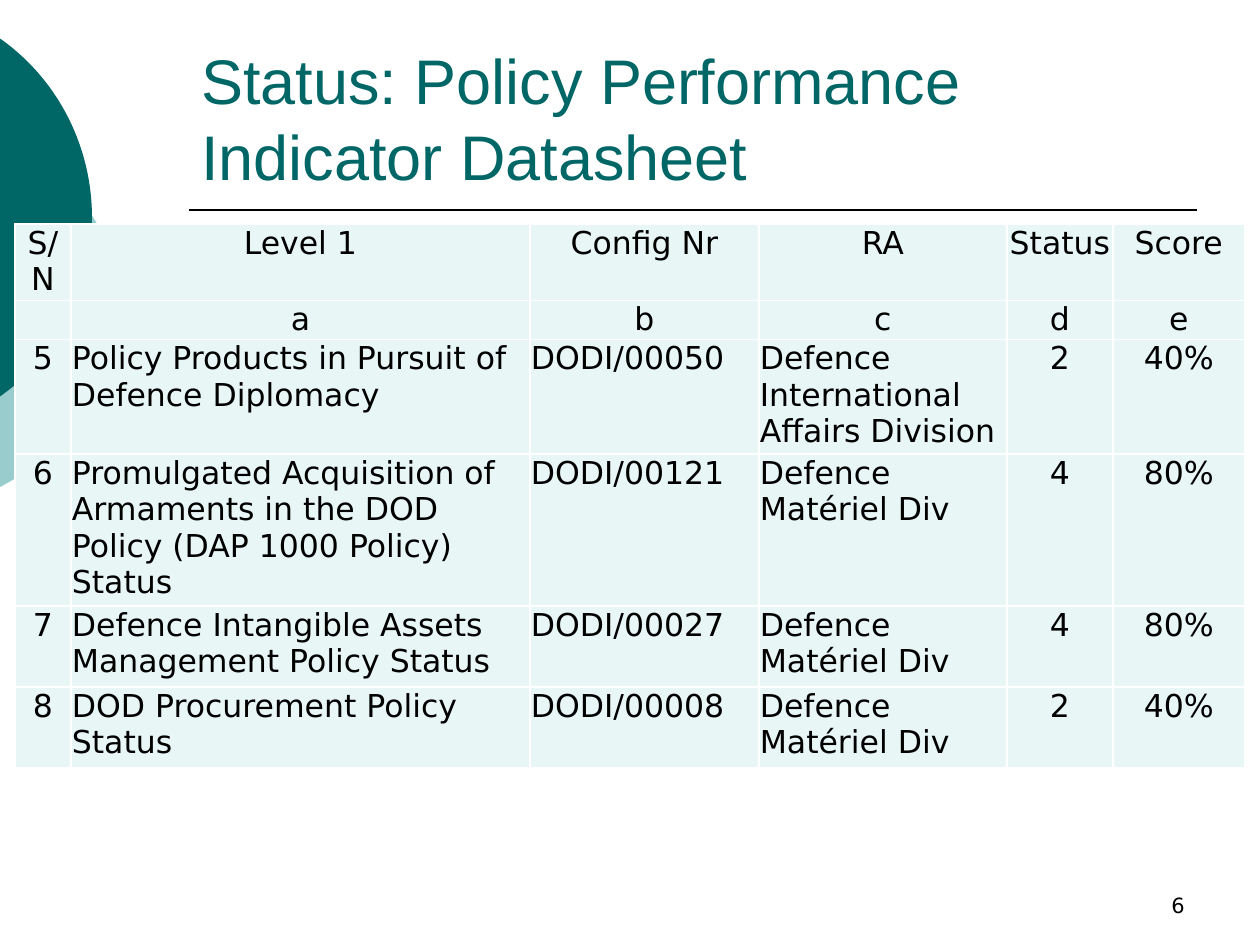
from pptx import Presentation
from pptx.dml.color import RGBColor
from pptx.enum.shapes import MSO_CONNECTOR as CONN, MSO_SHAPE as SHAPE
from pptx.enum.text import MSO_ANCHOR as ANCHOR, PP_ALIGN as ALIGN
from pptx.oxml.ns import qn
from pptx.util import Pt
from lxml.etree import SubElement

PX = 914400 // 126
TEAL, AQUA, MINT = "006666", "99CCCC", "E8F6F6"
BLACK, WHITE = "000000", "FFFFFF"
BODY_FONT = "DejaVu Sans"
COLUMNS = [56, 459, 229, 248, 106, 132]
ROW_HEIGHTS = [26, 26, 81, 81, 81, 81]
LEFT_COLUMNS = (1, 2, 3)
ROWS = [
    ["S/N", "Level 1", "Config Nr", "RA", "Status", "Score"],
    ["", "a", "b", "c", "d", "e"],
    ["5", "Policy Products in Pursuit of Defence Diplomacy", "DODI/00050",
     "Defence International Affairs Division", "2", "40%"],
    ["6", "Promulgated Acquisition of Armaments in the DOD Policy (DAP 1000 Policy) Status",
     "DODI/00121", "Defence Matériel Div", "4", "80%"],
    ["7", "Defence Intangible Assets Management Policy Status", "DODI/00027",
     "Defence Matériel Div", "4", "80%"],
    ["8", "DOD Procurement Policy Status", "DODI/00008",
     "Defence Matériel Div", "2", "40%"],
]


def px(n):
    return n * PX


def color(value):
    return RGBColor.from_string(value)


def set_text(tf, text, size, font, fill, align=ALIGN.LEFT):
    tf.word_wrap = True
    p = tf.paragraphs[0]
    p.text = text
    p.alignment = align
    p.font.size = Pt(size)
    p.font.name = font
    p.font.color.rgb = color(fill)


def add_text(s, left, top, width, height, *style):
    tf = s.shapes.add_textbox(px(left), px(top), px(width), px(height)).text_frame
    tf.vertical_anchor = ANCHOR.BOTTOM
    set_text(tf, *style)


def add_disc(s, left, top, width, height, fill):
    sp = s.shapes.add_shape(SHAPE.OVAL, px(left), px(top), px(width), px(height))
    sp.shadow.inherit = False
    sp.fill.solid()
    sp.fill.fore_color.rgb = color(fill)
    sp.line.fill.background()


def add_rule(s, x1, x2, y):
    line = s.shapes.add_connector(CONN.STRAIGHT, px(x1), px(y), px(x2), px(y))
    line.line.color.rgb = color(BLACK)
    line.line.width = Pt(1)
    SubElement(line._element.spPr, qn("a:effectLst"))


def style_cell(cell):
    cell.margin_left = cell.margin_right = cell.margin_top = px(1)
    cell.margin_bottom = 0
    tc_pr = cell._tc.get_or_add_tcPr()
    for side in ("a:lnL", "a:lnR", "a:lnT", "a:lnB"):
        ln = SubElement(tc_pr, qn(side), w=str(Pt(1)))
        SubElement(SubElement(ln, qn("a:solidFill")), qn("a:srgbClr"), val=WHITE)
    cell.fill.solid()
    cell.fill.fore_color.rgb = color(MINT)


def add_status_table(s, left, top, height):
    frame = s.shapes.add_table(len(ROWS), len(COLUMNS), px(left), px(top),
                               px(sum(COLUMNS)), px(height))
    table = frame.table
    table.first_row = table.horz_banding = False
    for column, width in zip(table.columns, COLUMNS):
        column.width = px(width)
    for i, (row, row_height) in enumerate(zip(table.rows, ROW_HEIGHTS)):
        row.height = px(row_height)
        for j, cell in enumerate(row.cells):
            left_aligned = i > 1 and j in LEFT_COLUMNS
            style_cell(cell)
            set_text(cell.text_frame, ROWS[i][j], 18, BODY_FONT, BLACK,
                     ALIGN.LEFT if left_aligned else ALIGN.CENTER)
    frame.height = px(height)


def main():
    prs = Presentation()
    prs.slide_width, prs.slide_height = px(1260), px(945)
    s = prs.slides.add_slide(prs.slide_layouts[6])
    add_disc(s, -446, 95, 567, 431, AQUA)
    add_disc(s, -334, 0, 426, 435, TEAL)
    add_rule(s, 189, 1197, 210)
    add_text(s, 189, 42, 1008, 157,
             "Status: Policy Performance Indicator Datasheet", 36, "Arial", TEAL)
    add_text(s, 903, 861, 294, 63, "6", 12, BODY_FONT, BLACK, ALIGN.RIGHT)
    add_status_table(s, 15, 224, 544)
    prs.save("out.pptx")


if __name__ == "__main__":
    main()
